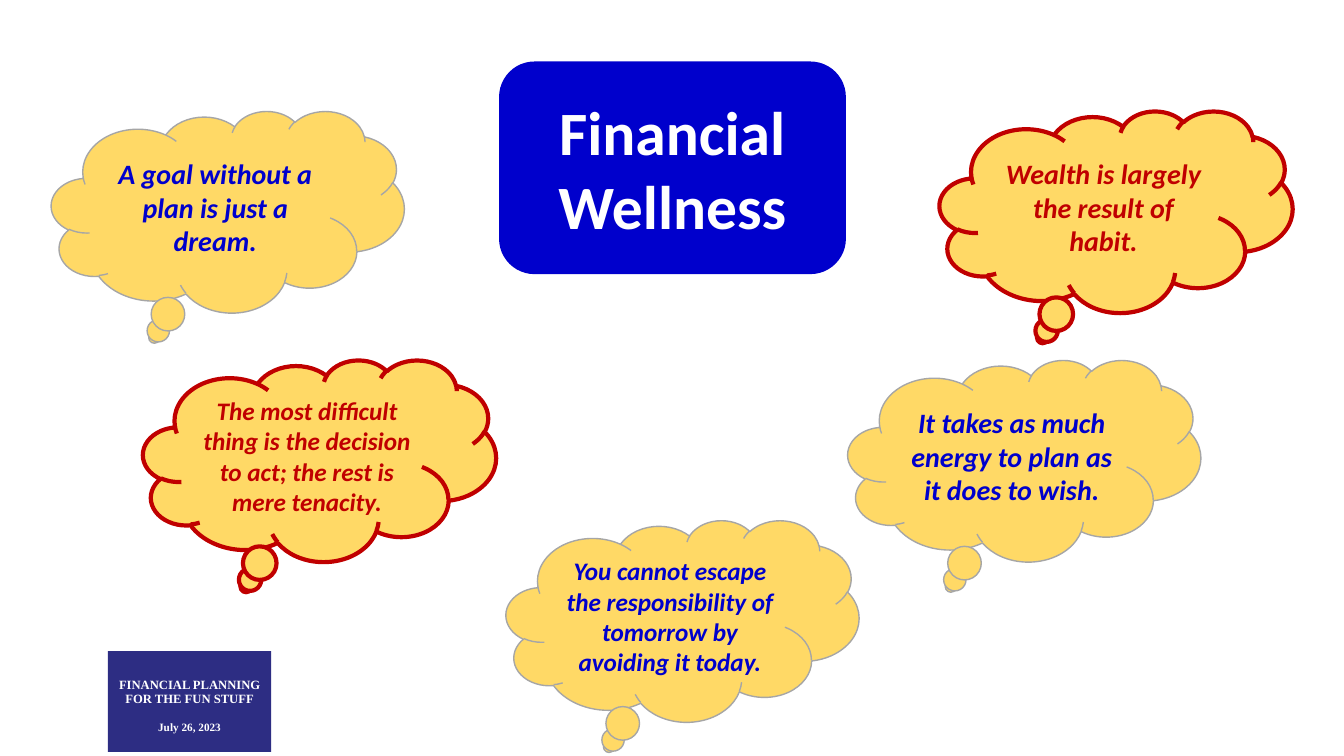
from pptx import Presentation
from pptx.dml.color import RGBColor
from pptx.enum import shapes, text
from pptx.util import Inches, Pt

HUES = {"navy": "2D2D83", "blue": "0000CC", "gold": "FFD966",
        "grey": "A6A6A6", "red": "C00000", "white": "FFFFFF"}
KIND = shapes.MSO_SHAPE


def hue(name):
    return RGBColor.from_string(HUES[name])


def block(slide, kind, box, fill, line=None):
    """Add a flat filled shape; line is (colour, width)."""
    shape = slide.shapes.add_shape(kind, *map(Inches, box))
    shape.shadow.inherit = False
    shape.fill.solid()
    shape.fill.fore_color.rgb = hue(fill)
    if line:
        shape.line.color.rgb = hue(line[0])
        shape.line.width = Pt(line[1])
    else:
        shape.line.fill.background()
    frame = shape.text_frame
    frame.word_wrap = True
    frame.vertical_anchor = text.MSO_ANCHOR.MIDDLE
    return shape


def write(para, words, color, **style):
    para.alignment = text.PP_ALIGN.CENTER
    run = para.add_run()
    run.text = words
    for key, value in style.items():
        setattr(run.font, key, value)
    run.font.color.rgb = hue(color)


def title(slide, box):
    shape = block(slide, KIND.ROUNDED_RECTANGLE, box, "blue")
    write(shape.text_frame.paragraphs[0], "Financial Wellness", "white",
          name="Calibri", size=Pt(44), bold=True)


def cloud(slide, box, words, size, ink, line):
    shape = block(slide, KIND.CLOUD_CALLOUT, box, "gold", line)
    write(shape.text_frame.paragraphs[0], words, ink,
          name="Calibri", size=Pt(size), bold=True, italic=True)


def badge(slide, box):
    frame = block(slide, KIND.RECTANGLE, box, "navy").text_frame
    frame.margin_top = Inches(0.15)
    rows = [("FINANCIAL PLANNING FOR THE FUN STUFF", 9, 0),
            ("July 26, 2023", 8, 11.5)]
    for i, (words, size, gap) in enumerate(rows):
        para = frame.add_paragraph() if i else frame.paragraphs[0]
        para.line_spacing = 0.9
        if gap:
            para.space_before = Pt(gap)
        write(para, words, "white", name="Times New Roman",
              size=Pt(size), bold=True)


def main():
    deck = Presentation()
    deck.slide_width, deck.slide_height = Inches(13.33), Inches(7.5)
    slide = deck.slides.add_slide(deck.slide_layouts[6])

    # Date badge and title
    badge(slide, (1.07, 6.46, 1.62, 1))
    title(slide, (4.95, 0.61, 3.44, 2.11))

    # Thought clouds: left, top, size, ink, words
    thin, thick = ("grey", 1), ("red", 3)
    quotes = [
        (0.51, 1.1, 20, "blue", "A goal without a plan is just a dream."),
        (1.42, 3.57, 18, "red", "The most difficult thing is the decision "
                                "to act; the rest is mere tenacity."),
        (9.32, 1.1, 20, "red", "Wealth is largely the result of habit."),
        (8.41, 3.57, 20, "blue",
         "It takes as much energy to plan as it does to wish."),
        (5.02, 5.16, 18, "blue", "You cannot escape the responsibility of "
                                 "tomorrow by avoiding it today."),
    ]
    for left, top, size, ink, words in quotes:
        cloud(slide, (left, top, 3.5, 2), words, size, ink,
              thick if ink == "red" else thin)

    deck.save("out.pptx")


if __name__ == "__main__":
    main()
